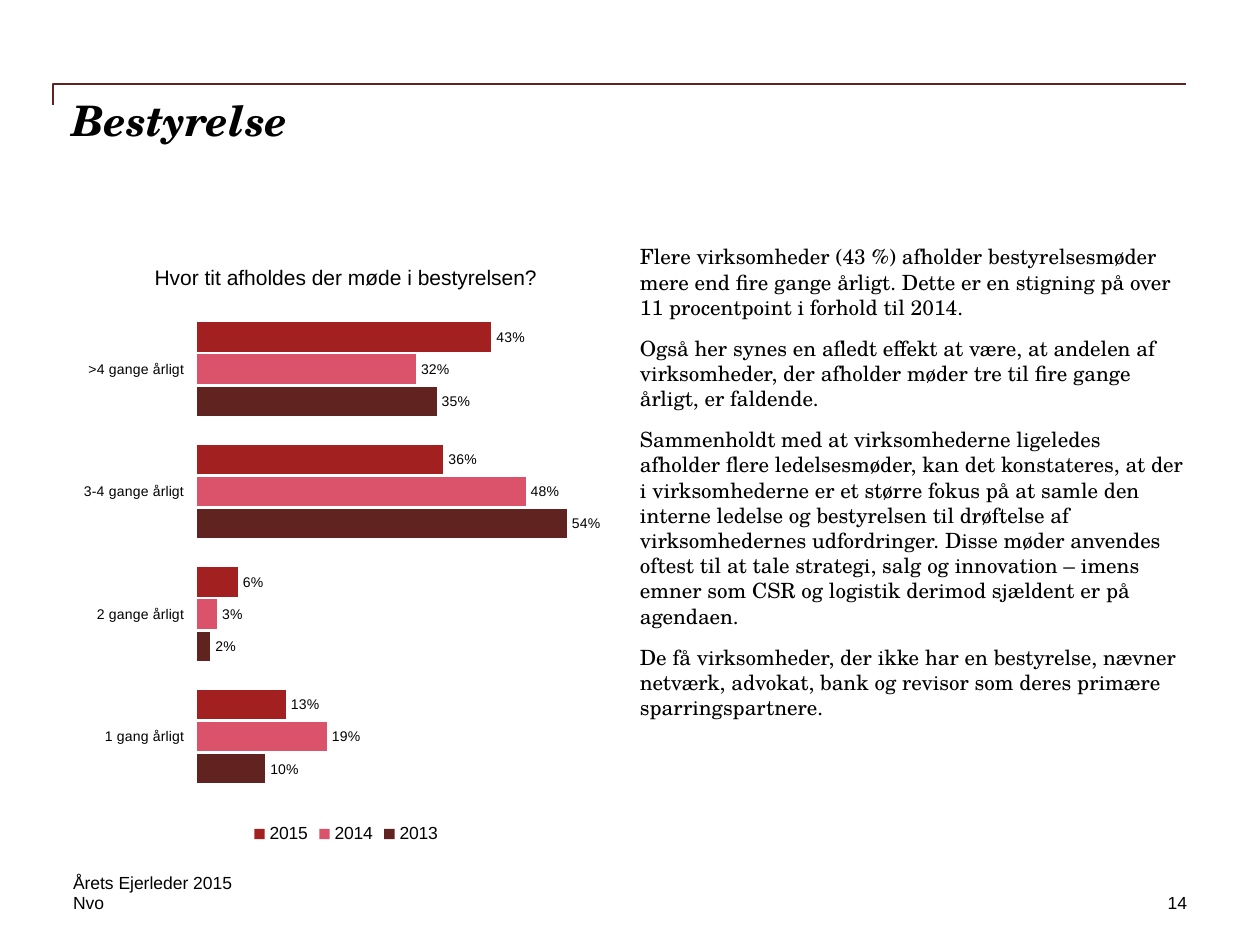
from pptx import Presentation
from pptx.chart.data import CategoryChartData
from pptx.dml.color import RGBColor
from pptx.enum.chart import XL_CHART_TYPE, XL_LABEL_POSITION, XL_LEGEND_POSITION, XL_TICK_MARK
from pptx.enum.text import MSO_ANCHOR, PP_ALIGN
from pptx.util import Pt

PX = 914400 // 126
BLACK = RGBColor(0x00, 0x00, 0x00)
MAROON = RGBColor(0x60, 0x23, 0x20)
PINK = RGBColor(0xDB, 0x53, 0x6A)
RED = RGBColor(0xA3, 0x20, 0x20)
SERIF, SANS = "TeX Gyre Schola", "Arial"

BODY = [
    "Flere virksomheder (43 %) afholder bestyrelsesmøder mere end fire gange årligt. "
    "Dette er en stigning på over 11 procentpoint i forhold til 2014.",
    "Også her synes en afledt effekt at være, at andelen af virksomheder, der afholder "
    "møder tre til fire gange årligt, er faldende.",
    "Sammenholdt med at virksomhederne ligeledes afholder flere ledelsesmøder, kan det "
    "konstateres, at der i virksomhederne er et større fokus på at samle den interne "
    "ledelse og bestyrelsen til drøftelse af virksomhedernes udfordringer. Disse møder "
    "anvendes oftest til at tale strategi, salg og innovation – imens emner som CSR og "
    "logistik derimod sjældent er på agendaen.",
    "De få virksomheder, der ikke har en bestyrelse, nævner netværk, advokat, bank og "
    "revisor som deres primære sparringspartnere.",
]
MEETINGS = [
    ("2013", (0.10, 0.02, 0.54, 0.35), MAROON),
    ("2014", (0.19, 0.03, 0.48, 0.32), PINK),
    ("2015", (0.13, 0.06, 0.36, 0.43), RED),
]

prs = Presentation()
prs.slide_width, prs.slide_height = 1260 * PX, 945 * PX
slide = prs.slides.add_slide(prs.slide_layouts[6])


def set_font(font, size, name=SANS):
    font.size, font.name = Pt(size), name
    font.color.rgb = BLACK


def add_text(box, lines, size, name=SANS, space_after=0):
    """Add a text box without margins, one paragraph per line; box is in px."""
    frame = slide.shapes.add_textbox(*(v * PX for v in box)).text_frame
    frame.word_wrap = True
    frame.margin_left = frame.margin_top = frame.margin_right = frame.margin_bottom = 0
    frame.text = "\n".join(lines)
    for paragraph in frame.paragraphs:
        set_font(paragraph.font, size, name)
        paragraph.space_after = Pt(space_after)
    return frame


# Rule above the title
outline = slide.shapes.build_freeform(53, 105, scale=PX)
outline.add_line_segments([(53, 84), (1186, 84)], close=False)
rule = outline.convert_to_shape()
rule.shadow.inherit = False
rule.fill.background()
rule.line.color.rgb = MAROON
rule.line.width = Pt(1)

# Title and body
title = add_text((73, 95, 1113, 126), ["Bestyrelse"], 24, SERIF)
title.paragraphs[0].font.bold = title.paragraphs[0].font.italic = True
add_text((640, 244, 546, 606), BODY, 12, SERIF, space_after=9)

# Meeting frequency chart
chart_data = CategoryChartData(number_format="0%")
chart_data.categories = ["1 gang årligt", "2 gange årligt", "3-4 gange årligt", ">4 gange årligt"]
for year, shares, _ in MEETINGS:
    chart_data.add_series(year, shares)
chart = slide.shapes.add_chart(
    XL_CHART_TYPE.BAR_CLUSTERED, 73 * PX, 242 * PX, 546 * PX, 607 * PX, chart_data
).chart
set_font(chart.font, 10)

chart.has_title = True
chart.chart_title.include_in_layout = False
chart.chart_title.text_frame.text = "Hvor tit afholdes der møde i bestyrelsen?"
heading_font = chart.chart_title.text_frame.paragraphs[0].font
set_font(heading_font, 12)
heading_font.bold = False

chart.has_legend = True
chart.legend.position = XL_LEGEND_POSITION.BOTTOM
chart.legend.include_in_layout = False
set_font(chart.legend.font, 10)

chart.value_axis.visible = False
chart.value_axis.has_major_gridlines = False
frequency_axis = chart.category_axis
frequency_axis.major_tick_mark = XL_TICK_MARK.OUTSIDE
frequency_axis.format.line.fill.background()
set_font(frequency_axis.tick_labels.font, 8)

plot = chart.plots[0]
plot.vary_by_categories = False
plot.gap_width, plot.overlap = 100, -10
for series, (_, _, color) in zip(plot.series, MEETINGS):
    series.format.fill.solid()
    series.format.fill.fore_color.rgb = color
    labels = series.data_labels
    labels.show_value = True
    labels.position = XL_LABEL_POSITION.OUTSIDE_END
    labels.number_format, labels.number_format_is_linked = "0%", False
    set_font(labels.font, 8)

# Footer
report = add_text((73, 872, 725, 21), ["Årets Ejerleder 2015"], 10)
report.vertical_anchor = MSO_ANCHOR.BOTTOM
add_text((73, 892, 357, 21), ["Nvo"], 10)
page = add_text((977, 892, 210, 21), ["14"], 10)
page.paragraphs[0].alignment = PP_ALIGN.RIGHT

prs.save("out.pptx")
